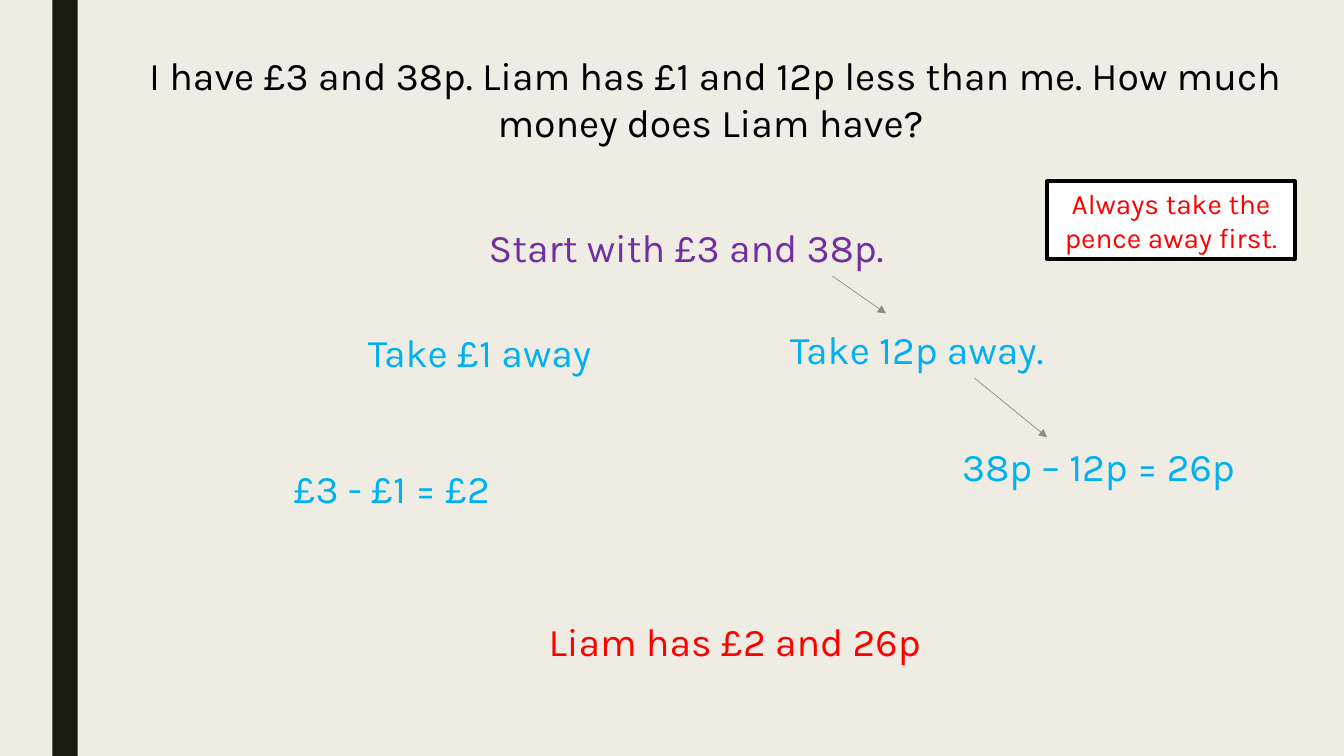
from lxml.etree import SubElement
from pptx import Presentation
from pptx.dml.color import RGBColor
from pptx.enum.shapes import MSO_CONNECTOR as Link, MSO_SHAPE as Form
from pptx.enum.text import MSO_ANCHOR as Anchor, MSO_AUTO_SIZE as Fit, PP_ALIGN as Align
from pptx.oxml.ns import qn
from pptx.util import Cm, Pt

HUES = {
    "paper": "EFEDE3", "bar": "191B0E", "ink": "000000", "white": "FFFFFF",
    "start": "7030A0", "step": "00B0F0", "red": "FF0000", "arrow": "8C8D86",
}
FONT = "Karla"
ROW = 1.45


def hue(name):
    return RGBColor.from_string(HUES[name])


def place(shape, box):
    shape.left, shape.top, shape.width, shape.height = map(Cm, box)


def write(shape, text, tint, size=28, anchor=Anchor.TOP):
    frame = shape.text_frame
    frame.word_wrap = True
    frame.auto_size = Fit.NONE
    frame.vertical_anchor = anchor
    frame.margin_left = frame.margin_right = Cm(0.25)
    frame.margin_top = frame.margin_bottom = Cm(0.13)
    para = frame.paragraphs[0]
    para.alignment = Align.CENTER
    run = para.add_run()
    run.text = text
    run.font.name = FONT
    run.font.size = Pt(size)
    run.font.color.rgb = hue(tint)


def add_block(slide, box, fill):
    block = slide.shapes.add_shape(Form.RECTANGLE, *map(Cm, box))
    block.shadow.inherit = False
    block.fill.solid()
    block.fill.fore_color.rgb = hue(fill)
    block.line.fill.background()
    return block


def add_arrow(slide, start, end):
    arrow = slide.shapes.add_connector(Link.STRAIGHT, *map(Cm, start + end))
    arrow.line.color.rgb = hue("arrow")
    arrow.line.width = Pt(0.5)
    SubElement(arrow.line._get_or_add_ln(), qn("a:tailEnd"), type="triangle")
    SubElement(arrow._element.spPr, qn("a:effectLst"))


def add_head(slide, box):
    title = slide.shapes.title
    place(title, box)
    write(title, "I have £3 and 38p. Liam has £1 and 12p less than me. "
                 "How much money does Liam have? ", "ink")


def add_steps(slide, box):
    left, top, wide, _ = box
    steps = [
        ("Start with £3 and 38p. ", "start", 0, 0, wide),
        ("Take 12p away.", "step", 16.31, 2.57, 7.95),
        ("38p – 12p = 26p", "step", 20.27, 5.51, 9.19),
        ("Take £1 away", "step", 4.67, 2.64, 9.19),
        ("£3 - £1 = £2", "step", 2.46, 6.05, 9.19),
        ("Liam has £2 and 26p ", "red", 1.22, 9.91, wide),
    ]
    for text, tint, x, y, width in steps:
        area = left + x, top + y, width, ROW
        write(slide.shapes.add_textbox(*map(Cm, area)), text, tint)
    for x, y, dx, dy in [(18.16, ROW, 1.35, 0.94), (21.74, 4.02, 1.83, 1.49)]:
        start = left + x, top + y
        add_arrow(slide, start, (start[0] + dx, start[1] + dy))


def add_note(slide, box):
    note = add_block(slide, box, "white")
    note.line.color.rgb = hue("ink")
    note.line.width = Pt(2.75)
    write(note, "Always take the pence away first.", "red", 20, Anchor.MIDDLE)


def main():
    deck = Presentation()
    deck.slide_width, deck.slide_height = Cm(33.87), Cm(19.05)
    slide = deck.slides.add_slide(deck.slide_layouts[5])
    slide.background.fill.solid()
    slide.background.fill.fore_color.rgb = hue("paper")
    add_block(slide, (1.32, 0, 0.64, 19.05), "bar")
    add_head(slide, (3.43, 1.17, 29.18, 2.64))
    add_steps(slide, (2.82, 5.51, 29.18, 11.36))
    add_note(slide, (26.39, 4.57, 6.25, 1.96))
    deck.save("out.pptx")


if __name__ == "__main__":
    main()
